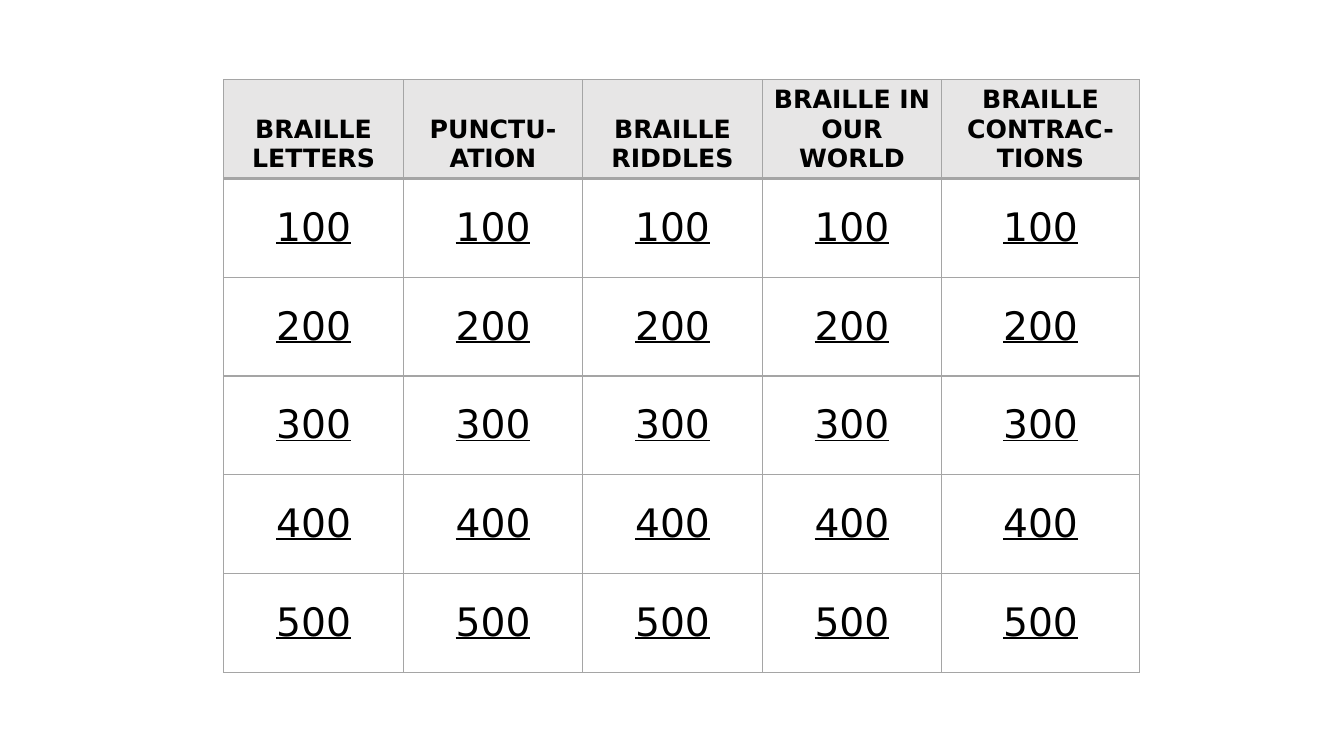
from dataclasses import dataclass

from lxml.etree import SubElement
from pptx import Presentation
from pptx.dml.color import RGBColor
from pptx.enum.text import MSO_VERTICAL_ANCHOR as Anchor, PP_PARAGRAPH_ALIGNMENT as Align
from pptx.oxml.ns import qn
from pptx.table import _Cell as Cell
from pptx.util import Inches, Pt

BLACK = RGBColor(0x00, 0x00, 0x00)
WHITE = RGBColor(0xFF, 0xFF, 0xFF)
HEADER_GRAY = RGBColor(0xE7, 0xE6, 0xE6)
BORDER_GRAY = RGBColor(0xA5, 0xA5, 0xA5)
FONT = "DejaVu Sans"

PAGE_WIDTH, PAGE_HEIGHT = Inches(13.33), Inches(7.5)
BOARD_LEFT, BOARD_TOP = Inches(2.22), Inches(0.79)
COLUMN_WIDTH, LAST_COLUMN_WIDTH = Inches(1.78), Inches(1.96)
ROW_HEIGHT = Inches(0.98)

CATEGORIES = (
    "BRAILLE LETTERS",
    "PUNCTU- ATION",
    "BRAILLE RIDDLES",
    "BRAILLE IN OUR WORLD",
    "BRAILLE CONTRAC- TIONS",
)
POINTS = range(100, 501, 100)


@dataclass(frozen=True)
class CellStyle:
    size: int
    bold: bool
    underline: bool
    anchor: Anchor
    fill: RGBColor
    bottom_border: int


HEADER = CellStyle(18, True, False, Anchor.BOTTOM, HEADER_GRAY, 2)
VALUE = CellStyle(28, False, True, Anchor.MIDDLE, WHITE, 1)


def draw_borders(cell: Cell, bottom_border: int) -> None:
    properties = cell._tc.get_or_add_tcPr()
    for side, width in (("L", 1), ("R", 1), ("T", 1), ("B", bottom_border)):
        line = SubElement(properties, qn(f"a:ln{side}"), w=str(Pt(width)))
        color = SubElement(line, qn("a:solidFill"))
        SubElement(color, qn("a:srgbClr"), val=str(BORDER_GRAY))


def fill_cell(cell: Cell, text: str, style: CellStyle) -> None:
    draw_borders(cell, style.bottom_border)
    cell.fill.solid()
    cell.fill.fore_color.rgb = style.fill
    cell.vertical_anchor = style.anchor
    para = cell.text_frame.paragraphs[0]
    para.alignment = Align.CENTER
    span = para.add_run()
    span.text = text
    span.font.name = FONT
    span.font.size = Pt(style.size)
    span.font.bold = style.bold
    span.font.underline = style.underline
    span.font.color.rgb = BLACK


def main() -> None:
    deck = Presentation()
    deck.slide_width, deck.slide_height = PAGE_WIDTH, PAGE_HEIGHT
    page = deck.slides.add_slide(deck.slide_layouts[6])

    widths = [COLUMN_WIDTH] * (len(CATEGORIES) - 1) + [LAST_COLUMN_WIDTH]
    row_count = len(POINTS) + 1
    board = page.shapes.add_table(
        row_count, len(CATEGORIES), BOARD_LEFT, BOARD_TOP,
        sum(widths), ROW_HEIGHT * row_count,
    ).table
    board.first_row = False
    board.horz_banding = False
    for row in board.rows:
        row.height = ROW_HEIGHT

    for column, (category, width) in enumerate(zip(CATEGORIES, widths)):
        board.columns[column].width = width
        fill_cell(board.cell(0, column), category, HEADER)
        for row, points in enumerate(POINTS, start=1):
            fill_cell(board.cell(row, column), str(points), VALUE)

    deck.save("out.pptx")


if __name__ == "__main__":
    main()
